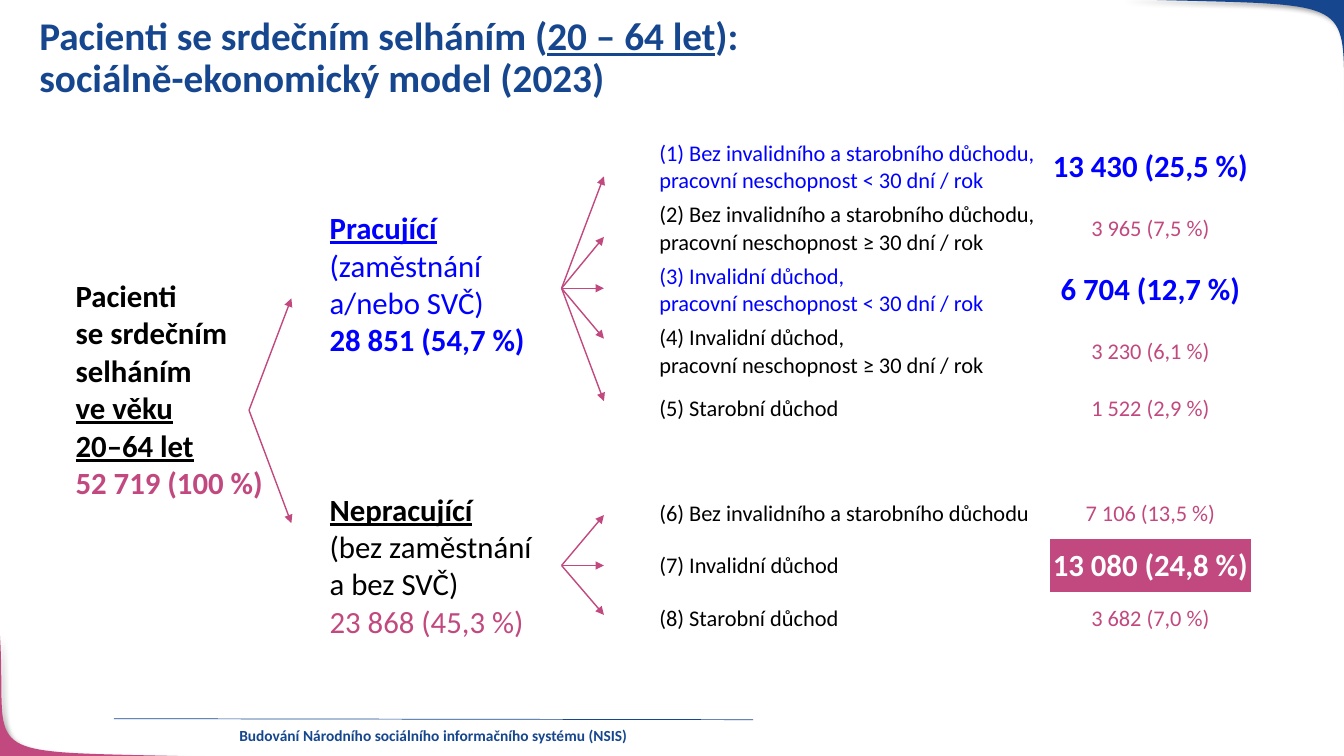
from lxml import etree
from pptx import Presentation
from pptx.dml.color import RGBColor
from pptx.enum.shapes import MSO_CONNECTOR
from pptx.enum.text import MSO_ANCHOR, MSO_AUTO_SIZE, PP_ALIGN
from pptx.oxml.ns import qn
from pptx.util import Inches, Pt

LEFT, CENTER = PP_ALIGN.LEFT, PP_ALIGN.CENTER
MIDDLE = MSO_ANCHOR.MIDDLE
FONT = "Calibri"
NAVY, PINK, BLUE, BLACK, WHITE = "16468E", "C1497F", "0000FF", "000000", "FFFFFF"
NO_STYLE = "{2D5ABB26-0587-4C30-8999-92F81FD0307C}"

# A paragraph is a list of runs: (text, size, colour, bold, underline)
TITLE = [[("Pacienti se srdečním selháním (", 28, NAVY, True, False),
          ("20 – 64 let", 28, NAVY, True, True),
          ("):\nsociálně-ekonomický model (2023)", 28, NAVY, True, False)]]
FOOTER = [[("Budování Národního sociálního informačního systému (NSIS)", 11, NAVY, True, False)]]

COL_WIDTHS = [2.52, 3.36, 3.88, 2.0]
ROW_HEIGHTS = [0.61] * 5 + [0.52] * 5

# (row, column, rows spanned, paragraphs)
GROUPS = [
    (1, 0, 9, [[("Pacienti\nse srdečním selháním\n", 22, BLACK, True, False),
                ("ve věku\n20–64 let\n", 22, BLACK, True, True),
                ("52 719 (100 %)", 22, PINK, True, False)]]),
    (1, 1, 5, [[("Pracující", 22, BLUE, True, True)],
               [("(zaměstnání\na/nebo SVČ)", 22, BLUE, False, False)],
               [("28 851 (54,7 %)", 22, BLUE, True, False)]]),
    (7, 1, 3, [[("Nepracující", 22, BLACK, True, True)],
               [("(bez zaměstnání\na bez SVČ)", 22, BLACK, False, False)],
               [("23 868 (45,3 %)", 22, PINK, False, False)]]),
]

# (row, category, category colour, value, value size, value colour, value fill)
CATEGORIES = [
    (1, "(1) Bez invalidního a starobního důchodu, pracovní neschopnost < 30 dní / rok",
     BLUE, "13 430 (25,5 %)", 22, BLUE, None),
    (2, "(2) Bez invalidního a starobního důchodu, pracovní neschopnost ≥ 30 dní / rok",
     BLACK, "3 965 (7,5 %)", 16, PINK, None),
    (3, "(3) Invalidní důchod,\npracovní neschopnost < 30 dní / rok",
     BLUE, "6 704 (12,7 %)", 22, BLUE, None),
    (4, "(4) Invalidní důchod,\npracovní neschopnost ≥ 30 dní / rok",
     BLACK, "3 230 (6,1 %)", 16, PINK, None),
    (5, "(5) Starobní důchod", BLACK, "1 522 (2,9 %)", 16, PINK, None),
    (7, "(6) Bez invalidního a starobního důchodu", BLACK, "7 106 (13,5 %)", 16, PINK, None),
    (8, "(7) Invalidní důchod", BLACK, "13 080 (24,8 %)", 22, WHITE, PINK),
    (9, "(8) Starobní důchod", BLACK, "3 682 (7,0 %)", 16, PINK, None),
]

# Arrow fans: (origin x, origin y, heights of the tips)
FANS = [
    (2.47, 4.07, [2.96, 5.19]),
    (5.57, 2.86, [1.75, 2.35, 2.86, 3.36, 3.98]),
    (5.57, 5.61, [5.11, 5.61, 6.1]),
]
FAN_WIDTH = 0.42

# Corners: (colour, four Bezier points, remaining outline)
CORNERS = [
    (PINK, [(2.13, 7.51), (-0.34, 7.44), (0.08, 7.59), (0, 6.3)], [(-0.01, 7.51)]),
    (NAVY, [(11.11, -0.01), (13.7, 0.07), (13.26, -0.1), (13.35, 1.42)], [(13.35, -0.01)]),
]
CURVE_STEPS = 40


def rgb(color):
    return RGBColor.from_string(color)


def write(tf, paragraphs, align=LEFT):
    """Fill a text frame; a newline inside a run becomes a line break."""
    tf.word_wrap = True
    for i, runs in enumerate(paragraphs):
        p = tf.paragraphs[0] if i == 0 else tf.add_paragraph()
        p.alignment = align
        for text, size, color, bold, underline in runs:
            for j, line in enumerate(text.split("\n")):
                if j:
                    p.add_line_break()
                if not line:
                    continue
                r = p.add_run()
                r.text = line
                r.font.name, r.font.size = FONT, Pt(size)
                r.font.bold, r.font.underline = bold, underline
                r.font.color.rgb = rgb(color)


def add_line(s, x1, y1, x2, y2, color, width, arrow=False):
    c = s.shapes.add_connector(MSO_CONNECTOR.STRAIGHT, Inches(x1), Inches(y1), Inches(x2), Inches(y2))
    c.line.color.rgb = rgb(color)
    c.line.width = Pt(width)
    if arrow:
        etree.SubElement(c.line._get_or_add_ln(), qn("a:tailEnd"), type="triangle")
    etree.SubElement(c._element.spPr, qn("a:effectLst"))


def bezier(points, t):
    weights = [(1 - t) ** 3, 3 * t * (1 - t) ** 2, 3 * t ** 2 * (1 - t), t ** 3]
    return tuple(sum(w * pt[axis] for w, pt in zip(weights, points)) for axis in (0, 1))


def add_corner(s, color, curve, rest):
    outline = [bezier(curve, i / CURVE_STEPS) for i in range(CURVE_STEPS + 1)] + rest
    points = [(Inches(x), Inches(y)) for x, y in outline]
    builder = s.shapes.build_freeform(*points[0])
    builder.add_line_segments(points[1:], close=True)
    sp = builder.convert_to_shape()
    sp.fill.solid()
    sp.fill.fore_color.rgb = rgb(color)
    sp.line.fill.background()
    effects = etree.SubElement(sp._element.spPr, qn("a:effectLst"))
    shadow = etree.SubElement(effects, qn("a:outerShdw"), blurRad=str(Pt(4)),
                              dist=str(Pt(3)), dir=str(45 * 60000), rotWithShape="0")
    shade = etree.SubElement(shadow, qn("a:srgbClr"), val=BLACK)
    etree.SubElement(shade, qn("a:alpha"), val="40000")


def add_model_table(s):
    frame = s.shapes.add_table(len(ROW_HEIGHTS), len(COL_WIDTHS), Inches(0.65), Inches(0.74),
                               Inches(sum(COL_WIDTHS)), Inches(sum(ROW_HEIGHTS)))
    table = frame.table
    table.first_row = table.horz_banding = False
    table._tbl.tblPr.find(qn("a:tableStyleId")).text = NO_STYLE
    for col, width in zip(table.columns, COL_WIDTHS):
        col.width = Inches(width)
    for row, height in zip(table.rows, ROW_HEIGHTS):
        row.height = Inches(height)
    for cell in table.iter_cells():
        cell.fill.background()
        cell.vertical_anchor = MIDDLE

    for row, col, span, paragraphs in GROUPS:
        cell = table.cell(row, col)
        cell.merge(table.cell(row + span - 1, col))
        write(cell.text_frame, paragraphs)

    for row, label, label_color, value, size, color, fill in CATEGORIES:
        label_cell, value_cell = table.cell(row, 2), table.cell(row, 3)
        for cell in (label_cell, value_cell):
            cell.margin_left = cell.margin_right = cell.margin_top = Inches(0.01)
            cell.margin_bottom = 0
        write(label_cell.text_frame, [[(label, 16, label_color, False, False)]])
        write(value_cell.text_frame, [[(value, size, color, size > 16, False)]], CENTER)
        if fill:
            value_cell.fill.solid()
            value_cell.fill.fore_color.rgb = rgb(fill)


def main():
    prs = Presentation()
    prs.slide_width, prs.slide_height = Inches(13.33), Inches(7.5)
    s = prs.slides.add_slide(prs.slide_layouts[5])

    for corner in CORNERS:
        add_corner(s, *corner)
    add_line(s, 1.13, 7.13, 7.47, 7.14, NAVY, 0.5)
    footer = s.shapes.add_textbox(Inches(1.13), Inches(7.15), Inches(6.34), Inches(0.29))
    write(footer.text_frame, FOOTER, CENTER)

    add_model_table(s)
    for x, y, tips in FANS:
        for tip in tips:
            add_line(s, x, y, x + FAN_WIDTH, tip, PINK, 1, arrow=True)

    title = s.shapes.title
    title.left, title.top = Inches(0.29), Inches(0.24)
    title.width, title.height = Inches(13.04), Inches(0.69)
    tf = title.text_frame
    tf.auto_size = MSO_AUTO_SIZE.NONE
    tf.vertical_anchor = MIDDLE
    write(tf, TITLE)
    tf.paragraphs[0].line_spacing = 0.9

    prs.save("out.pptx")


if __name__ == "__main__":
    main()
